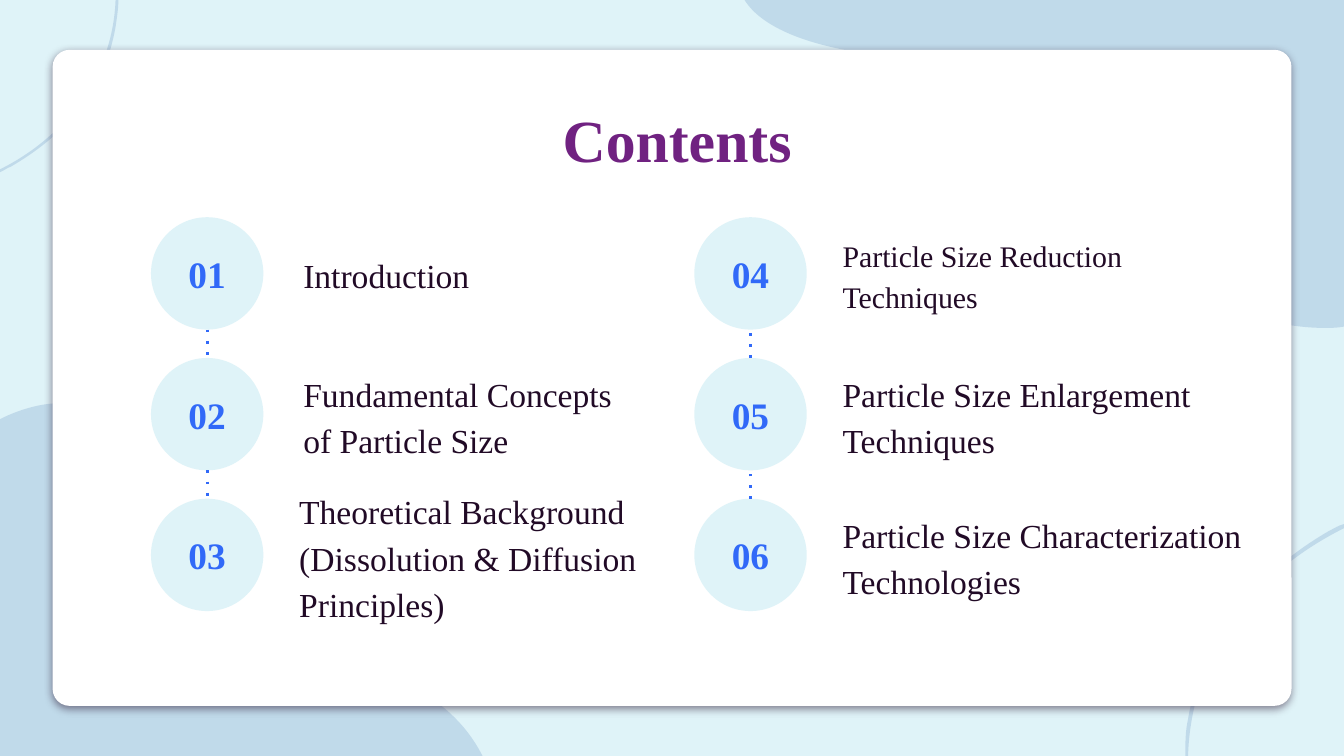
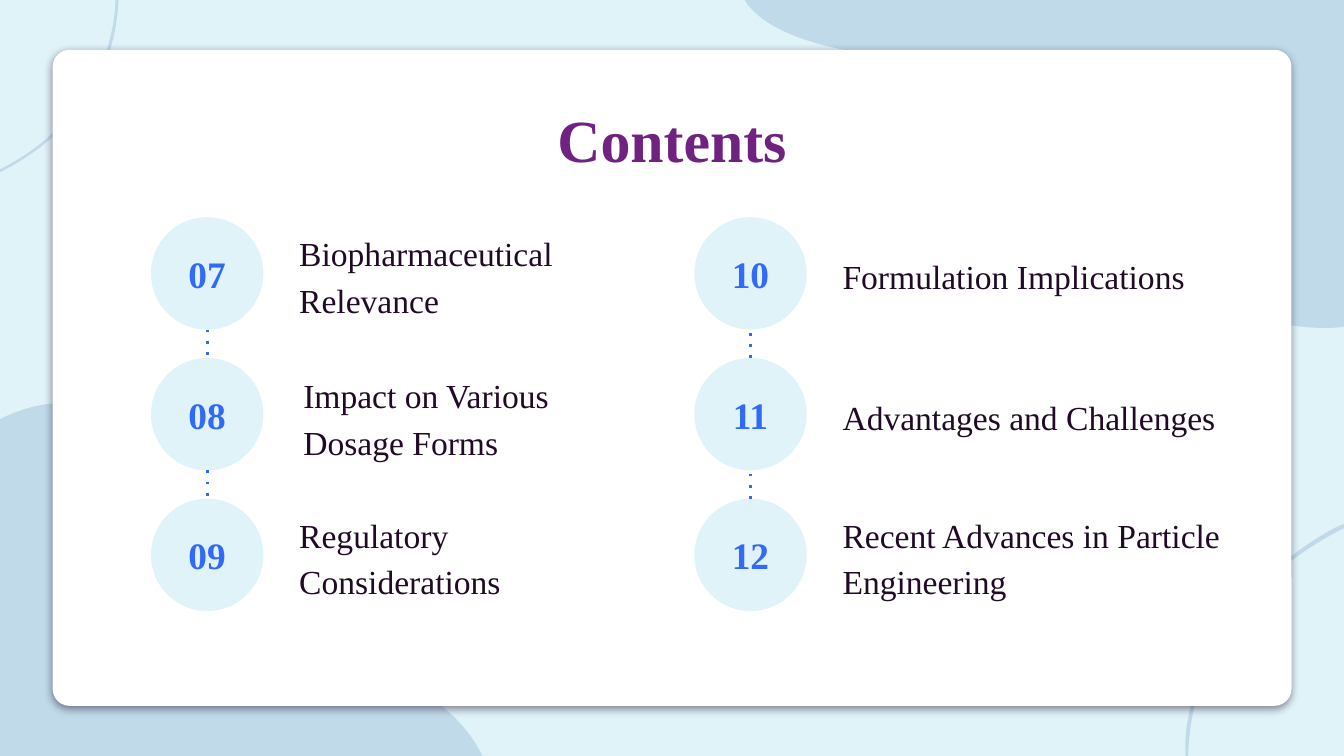
from collections import namedtuple

from lxml.etree import Element, SubElement
from pptx import Presentation
from pptx.dml.color import RGBColor
from pptx.enum.shapes import MSO_CONNECTOR as Link, MSO_SHAPE as Form
from pptx.enum.text import MSO_ANCHOR as Anchor, MSO_AUTO_SIZE as Fit, PP_ALIGN as Align
from pptx.oxml.ns import qn
from pptx.util import Pt

PALE = RGBColor(0xDF, 0xF3, 0xF8)
MIST = RGBColor(0xA0, 0xBF, 0xDB)
WHITE = RGBColor(0xFF, 0xFF, 0xFF)
PLUM = RGBColor(0x70, 0x22, 0x81)
INK = RGBColor(0x21, 0x0A, 0x26)
BLUE = RGBColor(0x31, 0x69, 0xF8)
FONT = "Times New Roman"

WIDE, HIGH = 720, 405
DISC, STEP = 60.2, 75.4
LEFT, RIGHT, TOP = 80.9, 372, 116.4
SHIFT = 72.3

Item = namedtuple("Item", "text width nudge drop size", defaults=(195, 0, 0, 18))

BLOBS = [
    [(636.5, 405),
     (637.2, 378.7, 645.8, 352.8, 661, 331.9),
     (676.8, 310.3, 697, 294.5, 720, 283),
     (720, 280.8),
     (717.1, 281.5, 715, 283, 712.1, 284.4),
     (693.4, 295.2, 676.8, 308.9, 663.1, 326.2),
     (649.4, 343.4, 640.1, 363.6, 636.5, 385.2),
     (635, 391.7, 635, 398.2, 635, 405)],
    [(32.4, 216),
     (15.8, 216, 0, 224.6, 0, 224.6),
     (0, 405),
     (258.5, 405),
     (225.4, 339.8, 123.1, 352.1, 80.6, 339.1),
     (38.2, 326.2, 85, 264.2, 61.9, 230.4),
     (54, 219.6, 43.2, 216, 32.4, 216)],
    [(398.9, 0),
     (410.4, 18.7, 449.3, 31.7, 512.6, 31.7),
     (514.8, 31.7, 517, 31.7, 519.8, 31.7),
     (520.6, 31.7, 521.3, 31.7, 522, 31.7),
     (617, 31.7, 576.7, 114.5, 647.3, 158.4),
     (666, 170.6, 691.2, 175.7, 709.2, 175.7),
     (713.5, 175.7, 716.4, 175.7, 720, 175),
     (720, 0)],
    [(61.9, 0),
     (61.2, 19.4, 54.7, 38.9, 43.2, 54),
     (32.4, 69.8, 17.3, 82.1, 0, 90.7),
     (0, 92.2),
     (2.2, 91.4, 3.6, 90, 5.8, 89.3),
     (19.4, 81.4, 32.4, 71.3, 42.5, 58.3),
     (52.6, 46.1, 59, 31, 61.9, 14.4),
     (62.6, 9.4, 63.4, 5, 63.4, 0)],
]

PAGES = [
    (59, 1,
     [Item("Introduction", nudge=2.2, drop=-0.5),
      Item("Fundamental Concepts of Particle Size", nudge=2.2),
      Item("Theoretical Background (Dissolution & Diffusion Principles)", 215.3)],
     [Item("Particle Size Reduction Techniques", size=16),
      Item("Particle Size Enlargement Techniques", 220.3),
      Item("Particle Size Characterization Technologies", 231)]),
    (56.2, 7,
     [Item("Biopharmaceutical Relevance"),
      Item("Impact on Various Dosage Forms", nudge=2.2, drop=0.8),
      Item("Regulatory Considerations")],
     [Item("Formulation Implications", 221),
      Item("Advantages and Challenges", 220.3),
      Item("Recent Advances in Particle Engineering", 230.4)]),
]


def place(shape, x, y, w, h):
    """Set a shape's box in points."""
    shape.left, shape.top, shape.width, shape.height = map(Pt, (x, y, w, h))


def paint(shape, color):
    """Give a shape a flat fill with no line or shadow."""
    shape.fill.solid()
    shape.fill.fore_color.rgb = color
    shape.line.fill.background()
    shape.shadow.inherit = False


def fade(parent, percent):
    """Add opacity to a colour element."""
    SubElement(parent, qn("a:alpha"), val=str(percent * 1000))


def write(shape, text, size, color, bold=False, align=Align.LEFT,
          anchor=Anchor.MIDDLE, space=1.15):
    """Fill a shape with one styled paragraph."""
    frame = shape.text_frame
    frame.auto_size = Fit.NONE
    frame.word_wrap = True
    frame.vertical_anchor = anchor
    frame.margin_left = frame.margin_right = Pt(7.2)
    frame.margin_top = frame.margin_bottom = Pt(7.2)
    frame.text = text
    para = frame.paragraphs[0]
    para.alignment, para.line_spacing = align, space
    para.space_before = Pt(0)
    font = para.font
    font.name, font.size, font.bold = FONT, Pt(size), bold
    font.color.rgb = color


def outline(shapes, blob):
    """Build a closed outline and bend its curved parts."""
    ends = [(part[-2] * 100, part[-1] * 100) for part in blob]
    pen = shapes.build_freeform(*ends[0], scale=Pt(0.01))
    pen.add_line_segments(ends[1:], close=True)
    shape = pen.convert_to_shape()
    x, y = (min(axis) for axis in zip(*ends))
    lines = list(shape.element.iter(qn("a:lnTo")))
    for line, part in zip(lines, blob[1:]):
        if len(part) == 6:
            curve = Element(qn("a:cubicBezTo"))
            for i in (0, 2, 4):
                SubElement(curve, qn("a:pt"), x=str(round(part[i] * 100 - x)),
                           y=str(round(part[i + 1] * 100 - y)))
            line.getparent().replace(line, curve)
    return shape


def backdrop(slide):
    """Draw the soft blobs and the white card, and move them to the layout."""
    parts = []
    for blob in BLOBS:
        shape = outline(slide.shapes, blob)
        paint(shape, MIST)
        fade(shape.element.spPr.find(".//" + qn("a:srgbClr")), 48)
        parts.append(shape)
    card = slide.shapes.add_shape(Form.ROUNDED_RECTANGLE, Pt(28.2), Pt(26.7), Pt(663.7), Pt(351.5))
    card.adjustments[0] = 0.026
    paint(card, WHITE)
    glow = SubElement(card.element.spPr.find(qn("a:effectLst")), qn("a:outerShdw"),
                      blurRad=str(Pt(4.5)), dist=str(Pt(1.5)), dir="5400000",
                      algn="bl", rotWithShape="0")
    fade(SubElement(glow, qn("a:srgbClr"), val=str(INK)), 50)
    tree = slide.slide_layout.shapes.element
    for i, part in enumerate(parts + [card]):
        part.element.find(".//" + qn("p:cNvPr")).set("id", str(100 + i))
        tree.insert(2 + i, part.element)


def header(slide, x):
    """Place the title at the top of the card."""
    title = slide.shapes.title
    place(title, x, 42.2, 607.7, 56)
    write(title, "Contents", 32, PLUM, True, Align.CENTER, Anchor.TOP)


def dots(slide, x, start, end):
    """Draw an upright dotted line."""
    link = slide.shapes.add_connector(Link.STRAIGHT, Pt(x), Pt(start), Pt(x), Pt(end))
    link.line.color.rgb = BLUE
    link.line.width = Pt(1.5)
    props = link.element.spPr
    SubElement(props.find(qn("a:ln")), qn("a:prstDash"), val="dot")
    SubElement(props, qn("a:effectLst"))


def chain(slide, x, y, first, items, rise=False):
    """Stack numbered discs with labels, joined by dotted lines."""
    for row, item in enumerate(items):
        top = y + row * STEP
        label = slide.shapes.add_textbox(Pt(x + SHIFT + item.nudge), Pt(top + item.drop),
                                         Pt(item.width), Pt(DISC))
        write(label, item.text, item.size, INK)
        disc = slide.shapes.add_shape(Form.OVAL, Pt(x), Pt(top), Pt(DISC), Pt(DISC))
        paint(disc, PALE)
        write(disc, f"{first + row:02}", 20, BLUE, True, Align.CENTER, space=1)
        if row:
            ends = (top - STEP + DISC, top)
            dots(slide, x + DISC / 2, *(ends[::-1] if rise else ends))


def contents(slide, x, first, near, far):
    """Fill one contents slide."""
    header(slide, x)
    chain(slide, LEFT, TOP, first, near)
    chain(slide, RIGHT, TOP, first + len(near), far, rise=True)


def main():
    """Build and save the deck."""
    deck = Presentation()
    deck.slide_width, deck.slide_height = Pt(WIDE), Pt(HIGH)
    back = deck.slide_master.background.fill
    back.solid()
    back.fore_color.rgb = PALE
    slides = [deck.slides.add_slide(deck.slide_layouts[5]) for _ in PAGES]
    backdrop(slides[0])
    for slide, page in zip(slides, PAGES):
        contents(slide, *page)
    deck.save("out.pptx")


if __name__ == "__main__":
    main()
